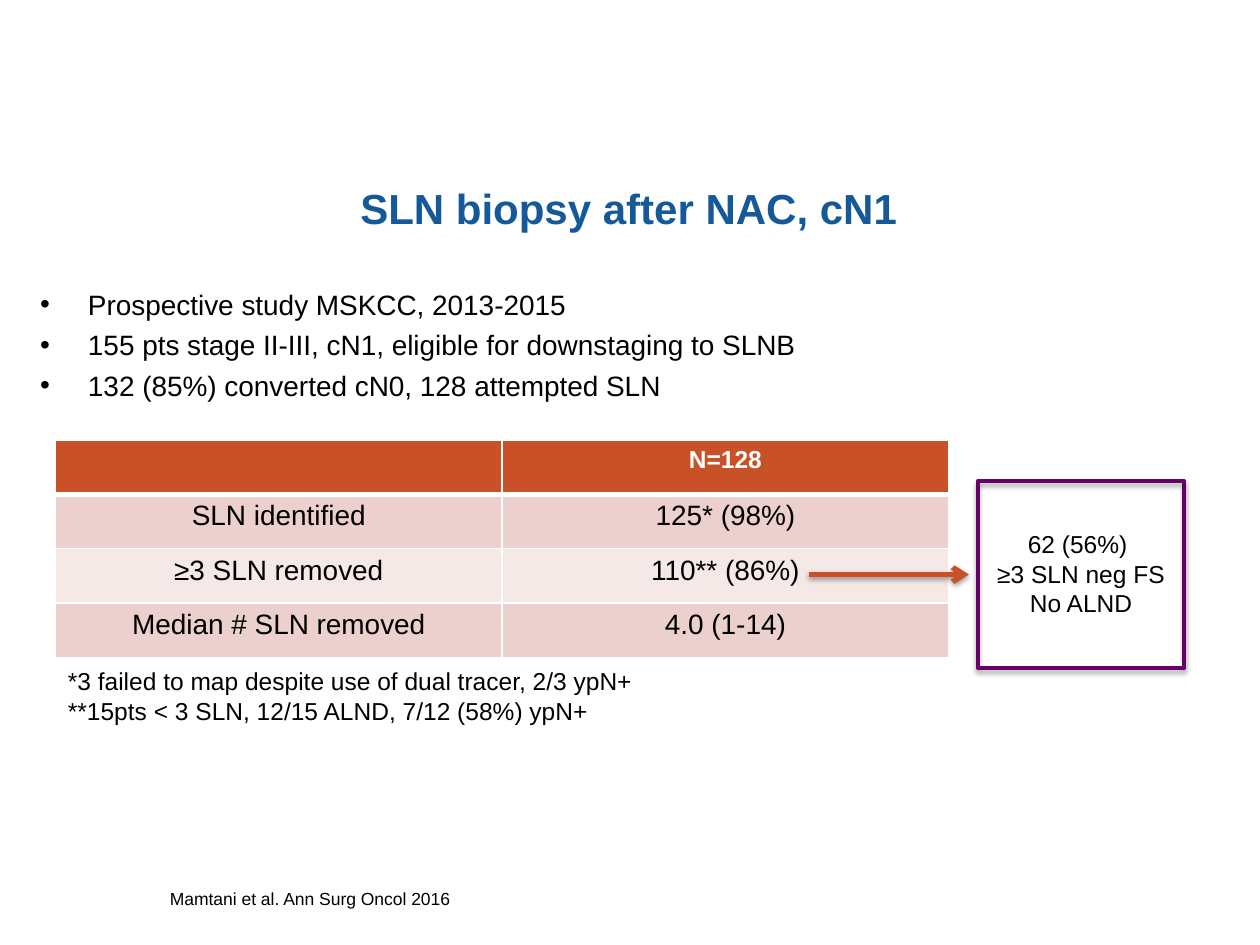
from lxml import etree
from pptx import Presentation
from pptx import util as u
from pptx.dml.color import RGBColor
from pptx.enum import shapes, text
from pptx.oxml import ns

BLUE = RGBColor(0x16, 0x59, 0x99)
ORANGE = RGBColor(0xC9, 0x51, 0x27)
PURPLE = RGBColor(0x66, 0x00, 0x66)
DARK_BAND = RGBColor(0xEB, 0xD0, 0xCD)
LIGHT_BAND = RGBColor(0xF5, 0xE9, 0xE8)
BLACK = RGBColor(0, 0, 0)
WHITE = RGBColor(255, 255, 255)


def add_element(parent, tag, **attributes):
    return etree.SubElement(parent, ns.qn(tag), attributes)


class SlideBuilder:
    font_name = "Arial"

    def __init__(self, page):
        self.page = page

    def style(self, para, size, color=BLACK, bold=False, align=text.PP_ALIGN.LEFT):
        para.alignment = align
        para.font.name = self.font_name
        para.font.size = u.Pt(size)
        para.font.bold = bold
        para.font.color.rgb = color

    def text_box(self, place, lines, size, wrap=False, bullets=False,
                 anchor=text.MSO_ANCHOR.TOP, **style):
        box = self.page.shapes.add_textbox(*map(u.Inches, place))
        frame = box.text_frame
        frame.word_wrap = wrap
        frame.vertical_anchor = anchor
        for index, line in enumerate(lines):
            para = frame.add_paragraph() if index else frame.paragraphs[0]
            para.text = line
            if bullets:
                self.bullet(para)
                if index:
                    para.space_before = u.Pt(4)
            self.style(para, size, **style)

    def bullet(self, para):
        props = para._p.get_or_add_pPr()
        indent = u.Inches(0.38)
        props.set("marL", str(indent))
        props.set("indent", str(-indent))
        add_element(props, "a:buFont", typeface=self.font_name)
        add_element(props, "a:buChar", char="•")

    def shadow(self, shape, distance, opacity):
        props = shape._element.spPr
        effects = add_element(props, "a:effectLst")
        outer = add_element(effects, "a:outerShdw", blurRad=str(u.Pt(3.1)),
                            dist=str(u.Pt(distance)), dir="5400000",
                            rotWithShape="0")
        color = add_element(outer, "a:srgbClr", val=str(BLACK))
        add_element(color, "a:alpha", val=str(opacity * 1000))

    def frame(self, place, color, width):
        box = self.page.shapes.add_shape(
            shapes.MSO_SHAPE.RECTANGLE, *map(u.Inches, place))
        box.fill.background()
        box.line.color.rgb = color
        box.line.width = u.Pt(width)
        self.shadow(box, 1.8, 35)

    def arrow(self, start, end, color, width):
        line = self.page.shapes.add_connector(
            shapes.MSO_CONNECTOR.STRAIGHT, *map(u.Inches, start + end))
        line.line.color.rgb = color
        line.line.width = u.Pt(width)
        add_element(line.line._get_or_add_ln(), "a:tailEnd", type="arrow")
        self.shadow(line, 1.6, 38)

    def borders(self, cell, widths):
        props = cell._tc.get_or_add_tcPr()
        for index, (side, width) in enumerate(widths.items()):
            line = etree.Element(ns.qn(f"a:ln{side}"), w=str(u.Pt(width)))
            fill = add_element(line, "a:solidFill")
            add_element(fill, "a:srgbClr", val=str(WHITE))
            props.insert(index, line)

    def table(self, place, rows):
        table = self.page.shapes.add_table(
            len(rows), len(rows[0]), *map(u.Inches, place)).table
        for row_index, row in enumerate(rows):
            header = row_index == 0
            band = DARK_BAND if row_index % 2 else LIGHT_BAND
            for column_index, value in enumerate(row):
                cell = table.cell(row_index, column_index)
                cell.text = value
                cell.fill.solid()
                cell.fill.fore_color.rgb = ORANGE if header else band
                self.borders(cell, {"L": 1, "R": 1,
                                    "T": 3 if row_index == 1 else 1,
                                    "B": 3 if header else 1})
                self.style(cell.text_frame.paragraphs[0],
                           size=14 if header else 16,
                           color=WHITE if header else BLACK,
                           bold=header, align=text.PP_ALIGN.CENTER)


def main():
    deck = Presentation()
    deck.slide_width, deck.slide_height = u.Inches(10), u.Inches(7.5)
    slide = SlideBuilder(deck.slides.add_slide(deck.slide_layouts[6]))

    slide.text_box((0.22, 1.36, 9.54, 0.57), ["SLN biopsy after NAC, cN1"], 24,
                   wrap=True, anchor=text.MSO_ANCHOR.MIDDLE, color=BLUE,
                   bold=True, align=text.PP_ALIGN.CENTER)
    slide.text_box((0.22, 2.23, 9.54, 5.27), [
        "Prospective study MSKCC, 2013-2015",
        "155 pts stage II-III, cN1, eligible for downstaging to SLNB",
        "132 (85%) converted cN0, 128 attempted SLN",
    ], 16, wrap=True, bullets=True)
    slide.table((0.44, 3.49, 7.09, 1.73), [
        ("", "N=128"),
        ("SLN identified", "125* (98%)"),
        ("≥3 SLN removed", "110** (86%)"),
        ("Median # SLN removed", "4.0 (1-14)"),
    ])
    slide.text_box((0.44, 5.24, 4.72, 0.57), [
        "*3 failed to map despite use of dual tracer, 2/3 ypN+",
        "**15pts < 3 SLN, 12/15 ALND, 7/12 (58%) ypN+",
    ], 14)
    slide.text_box((1.25, 7, 2.45, 0.27), ["Mamtani et al. Ann Surg Oncol 2016"], 10)
    slide.text_box((7.81, 4.15, 1.54, 0.81),
                   ["62 (56%) ", "≥3 SLN neg FS", "No ALND"], 14,
                   align=text.PP_ALIGN.CENTER)
    slide.frame((7.76, 3.82, 1.64, 1.48), PURPLE, 2.25)
    slide.arrow((6.42, 4.56), (7.69, 4.56), ORANGE, 3)

    deck.save("out.pptx")


if __name__ == "__main__":
    main()
